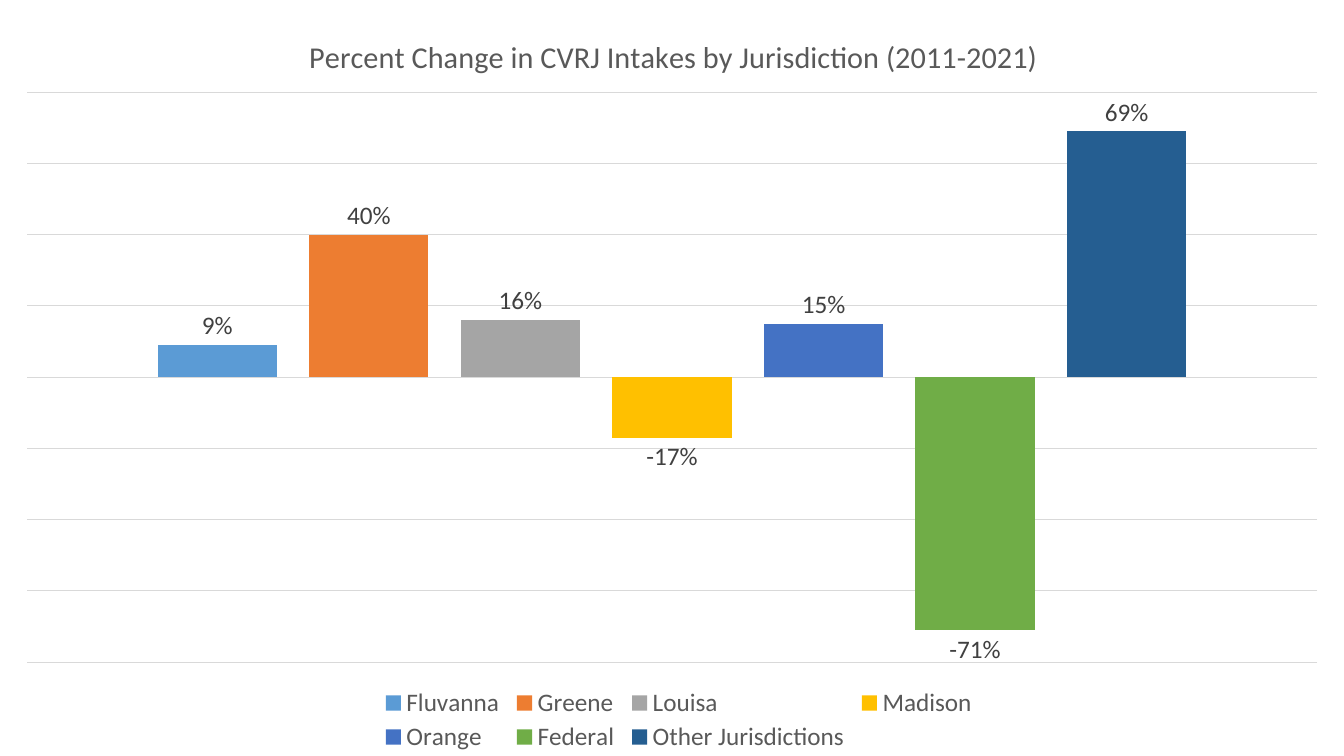
from lxml.etree import SubElement
from pptx import Presentation
from pptx.chart.data import CategoryChartData
from pptx.dml.color import RGBColor
from pptx.enum.chart import XL_CHART_TYPE, XL_LABEL_POSITION, XL_LEGEND_POSITION
from pptx.oxml.ns import qn
from pptx.util import Inches, Pt

TITLE = "Percent Change in CVRJ Intakes by Jurisdiction (2011-2021)"
JURISDICTIONS = [
    ("Fluvanna", 0.09, "5B9BD5"),
    ("Greene", 0.40, "ED7D31"),
    ("Louisa", 0.16, "A5A5A5"),
    ("Madison", -0.17, "FFC000"),
    ("Orange", 0.15, "4472C4"),
    ("Federal", -0.71, "70AD47"),
    ("Other Jurisdictions", 0.69, "255E91"),
]


def set_color(color_format, value):
    color_format.rgb = RGBColor.from_string(value)


def set_font(font, size, color):
    font.name = "Calibri"
    font.size = Pt(size)
    font.bold = False
    set_color(font.color, color)


def place(element, successors, shares, inner=False):
    for old in element.findall(qn("c:layout")):
        element.remove(old)
    layout = element.makeelement(qn("c:layout"), {})
    element.insert_element_before(layout, *successors)
    manual = SubElement(layout, qn("c:manualLayout"))
    settings = [("layoutTarget", "inner")] if inner else []
    settings += [("xMode", "edge"), ("yMode", "edge")]
    settings += list(zip("xywh", shares))
    for name, value in settings:
        SubElement(manual, qn(f"c:{name}")).set("val", str(value))


def style_title(chart):
    frame = chart.chart_title.text_frame
    frame.text = TITLE
    set_font(frame.paragraphs[0].font, 21.6, "595959")
    chart.chart_title.include_in_layout = False
    place(chart.chart_title._element, ("c:overlay", "c:spPr", "c:txPr"), (0.226, 0.04))


def style_axes(chart):
    chart.category_axis.visible = False
    axis = chart.value_axis
    axis.visible = False
    axis.minimum_scale, axis.maximum_scale, axis.major_unit = -0.8, 0.8, 0.2
    axis.tick_labels.number_format = "0%"
    axis.tick_labels.number_format_is_linked = False
    axis.has_major_gridlines = True
    line = axis.major_gridlines.format.line
    line.width = Pt(0.75)
    set_color(line.color, "D9D9D9")


def style_bars(chart):
    plot = chart.plots[0]
    plot.gap_width, plot.overlap = 219, -27
    plot.vary_by_categories = False
    for series, (_, _, color) in zip(plot.series, JURISDICTIONS):
        series.invert_if_negative = False
        series.format.fill.solid()
        set_color(series.format.fill.fore_color, color)
        labels = series.data_labels
        labels.show_value = True
        labels.number_format = "0%"
        labels.number_format_is_linked = False
        labels.position = XL_LABEL_POSITION.OUTSIDE_END
        set_font(labels.font, 18, "404040")


def style_legend(chart):
    chart.has_legend = True
    legend = chart.legend
    legend.position = XL_LEGEND_POSITION.BOTTOM
    legend.include_in_layout = False
    set_font(legend.font, 18, "595959")
    place(legend._element, ("c:overlay", "c:spPr", "c:txPr"), (0.28, 0.905, 0.45, 0.095))


def add_intake_chart(page, left, top, width, height):
    data = CategoryChartData(number_format="0%")
    data.categories = ["1"]
    for name, change, _ in JURISDICTIONS:
        data.add_series(name, [change])
    chart = page.shapes.add_chart(
        XL_CHART_TYPE.COLUMN_CLUSTERED, left, top, width, height, data
    ).chart
    set_font(chart.font, 18, "000000")
    style_title(chart)
    style_axes(chart)
    style_bars(chart)
    style_legend(chart)
    area = chart._chartSpace.chart.plotArea
    place(area, ("c:barChart",), (0.02, 0.122, 0.96, 0.754), inner=True)


def main():
    deck = Presentation()
    deck.slide_width, deck.slide_height = Inches(13.33), Inches(7.5)
    page = deck.slides.add_slide(deck.slide_layouts[6])
    add_intake_chart(page, 0, 0, deck.slide_width, deck.slide_height)
    deck.save("out.pptx")


if __name__ == "__main__":
    main()
